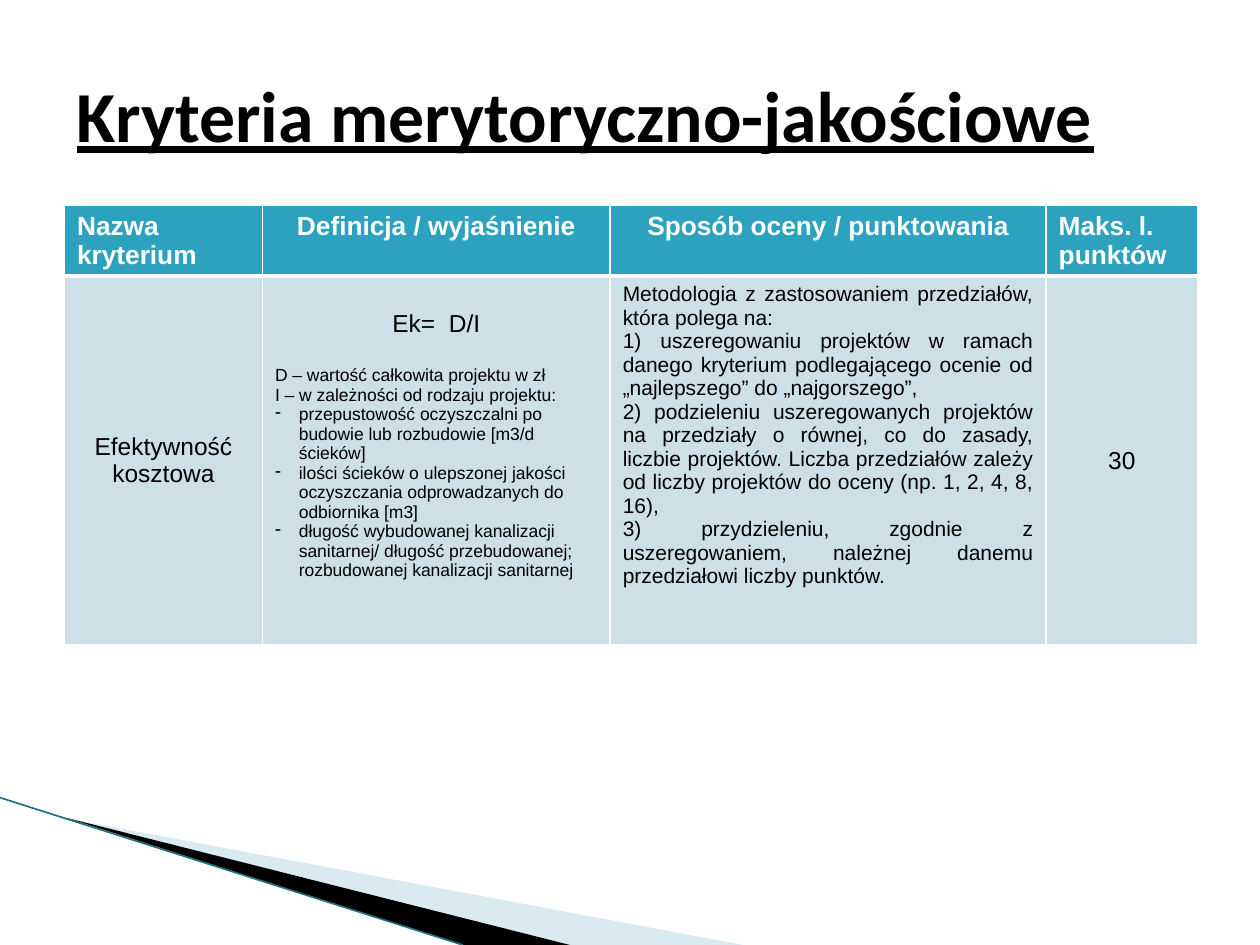
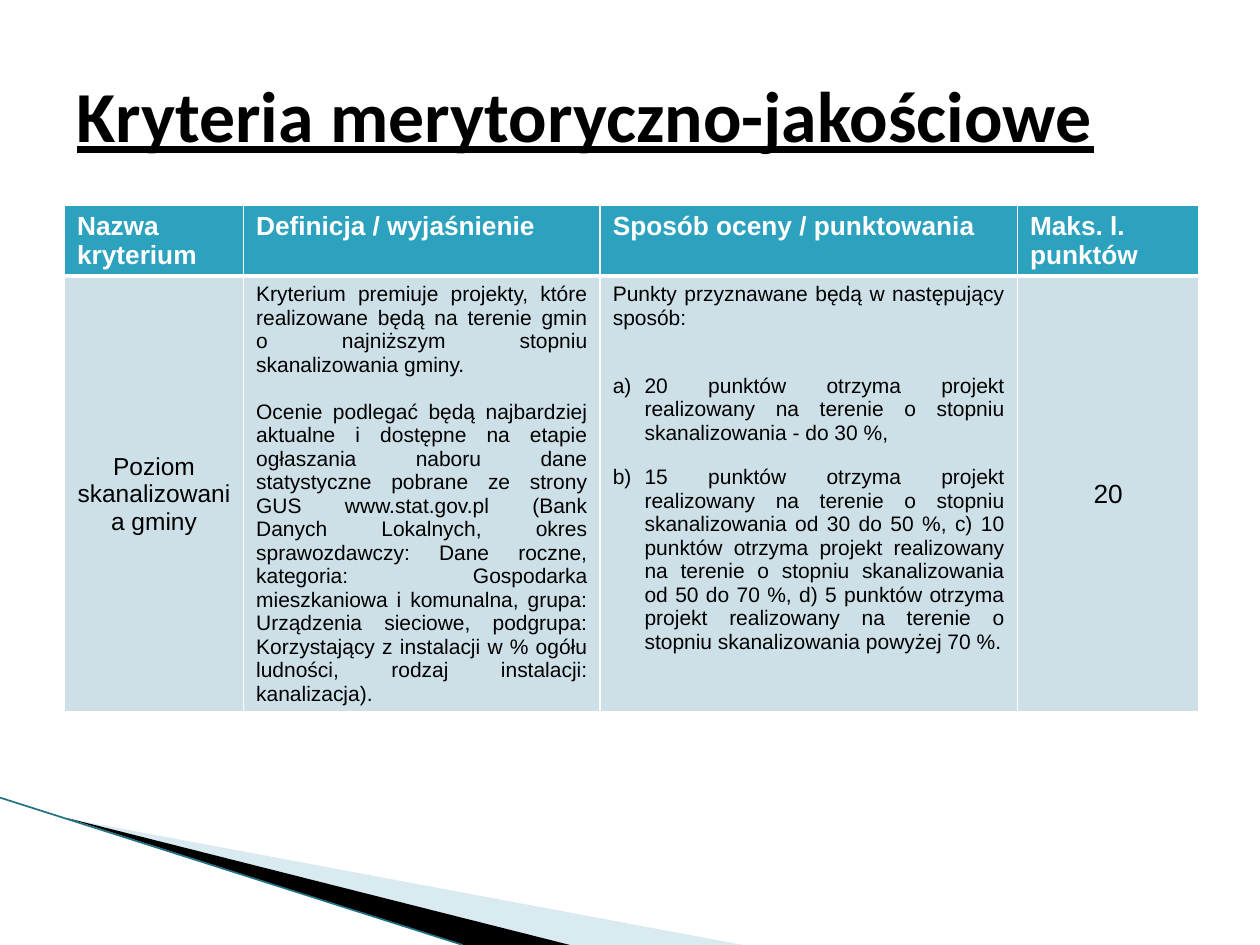
"""Builds two slides with tables of the quality criteria for project selection."""
from dataclasses import dataclass

import lxml.etree
import pptx
import pptx.dml.color
import pptx.enum.shapes
import pptx.enum.text
import pptx.oxml.ns
import pptx.presentation
import pptx.slide
import pptx.table
import pptx.text.text
import pptx.util

Cm = pptx.util.Cm
Pt = pptx.util.Pt
qn = pptx.oxml.ns.qn
Align = pptx.enum.text.PP_ALIGN
Anchor = pptx.enum.text.MSO_ANCHOR

WHITE, BLACK = "FFFFFF", "000000"
HEADER_FILL, BODY_FILL = "2DA2BF", "CDE0E8"
WEDGE_LIGHT, WEDGE_EDGE = "A0CBDC", "1F7183"
TITLE = "Kryteria merytoryczno-jakościowe"
HEADINGS = (
    "Nazwa kryterium",
    "Definicja / wyjaśnienie",
    "Sposób oceny / punktowania",
    "Maks. l. punktów",
)
LEFT, WIDTH = 1.3, 22.86
TABLE_TOP, HEADER_HEIGHT = 4.13, 1.43
THIN, THICK = 1, 3


@dataclass(frozen=True)
class Line:
    text: str
    size: float = 12
    align: Align = Align.JUSTIFY
    before: float = 0
    bullet: str = ""
    indent: float = 0
    color: str = BLACK
    bold: bool = False


@dataclass(frozen=True)
class Entry:
    lines: tuple[Line, ...]
    anchor: Anchor = Anchor.TOP
    top_margin: float = 0.13


@dataclass(frozen=True)
class Criterion:
    widths: tuple[float, ...]
    body_height: float
    heading_aligns: tuple[Align, ...]
    entries: tuple[Entry, ...]


@dataclass(frozen=True)
class Wedge:
    corners: tuple[tuple[float, float], ...]
    color: str
    opacity: int = 100


WEDGES = (
    Wedge(((1.4, 16.51), (14.98, 19.05), (11.48, 19.05)), WEDGE_LIGHT, 40),
    Wedge(((1.35, 16.49), (11.49, 19.05), (9.33, 19.05)), BLACK),
)


def rgb(code: str) -> pptx.dml.color.RGBColor:
    return pptx.dml.color.RGBColor.from_string(code)


def centred(text: str, size: float = 14) -> Entry:
    return Entry((Line(text, size, Align.CENTER),), Anchor.MIDDLE)


def dash(text: str) -> Line:
    return Line(text, 10, Align.LEFT, bullet="-", indent=0.48)


def lettered(text: str, before: float) -> Line:
    return Line(text, before=before, bullet="alphaLcParenR", indent=0.64)


CRITERIA = (
    Criterion(
        (3.99, 7.01, 8.79, 3.05),
        7.44,
        (Align.LEFT, Align.CENTER, Align.CENTER, Align.LEFT),
        (
            centred("Efektywność kosztowa"),
            Entry((
                Line("Ek=  D/I", 14, Align.CENTER),
                Line("D – wartość całkowita projektu w zł", 10, Align.LEFT, before=16),
                Line("I – w zależności od rodzaju projektu:", 10, Align.LEFT),
                dash("przepustowość oczyszczalni po budowie lub rozbudowie [m3/d ścieków]"),
                dash("ilości ścieków o ulepszonej jakości oczyszczania "
                     "odprowadzanych do odbiornika [m3]"),
                dash("długość wybudowanej kanalizacji sanitarnej/ długość "
                     "przebudowanej; rozbudowanej kanalizacji sanitarnej"),
            ), top_margin=0.69),
            Entry((
                Line("Metodologia z zastosowaniem przedziałów, która polega na:"),
                Line("1) uszeregowaniu projektów w ramach danego kryterium podlegającego "
                     "ocenie od „najlepszego” do „najgorszego”,"),
                Line("2) podzieleniu uszeregowanych projektów na przedziały o równej, co do "
                     "zasady, liczbie projektów. Liczba przedziałów zależy od liczby "
                     "projektów do oceny (np. 1, 2, 4, 8, 16),"),
                Line("3) przydzieleniu, zgodnie z uszeregowaniem, należnej danemu "
                     "przedziałowi liczby punktów."),
            )),
            centred("30"),
        ),
    ),
    Criterion(
        (3.61, 7.19, 8.41, 3.66),
        8.79,
        (Align.LEFT,) * 4,
        (
            centred("Poziom skanalizowania gminy"),
            Entry((
                Line("Kryterium premiuje projekty, które realizowane będą na terenie gmin "
                     "o najniższym stopniu skanalizowania gminy."),
                Line("Ocenie podlegać będą najbardziej aktualne i dostępne na etapie "
                     "ogłaszania naboru dane statystyczne pobrane ze strony GUS "
                     "www.stat.gov.pl (Bank Danych Lokalnych, okres sprawozdawczy: Dane "
                     "roczne, kategoria: Gospodarka mieszkaniowa i komunalna, grupa: "
                     "Urządzenia sieciowe, podgrupa: Korzystający z instalacji w % ogółu "
                     "ludności, rodzaj instalacji: kanalizacja).", before=13.4),
            )),
            Entry((
                Line("Punkty przyznawane będą w następujący sposób:"),
                lettered("20 punktów otrzyma projekt realizowany na terenie o stopniu "
                         "skanalizowania - do 30 %,", 25.5),
                lettered("15 punktów otrzyma projekt realizowany na terenie o stopniu "
                         "skanalizowania od 30 do 50 %, c) 10 punktów otrzyma projekt "
                         "realizowany na terenie o stopniu skanalizowania od 50 do 70 %, "
                         "d) 5 punktów otrzyma projekt realizowany na terenie o stopniu "
                         "skanalizowania powyżej 70 %.", 12),
            )),
            centred("20", 15),
        ),
    ),
)


def write_line(paragraph: pptx.text.text._Paragraph, line: Line) -> None:
    paragraph.text = line.text
    paragraph.alignment = line.align
    if line.bullet:
        properties = paragraph._p.get_or_add_pPr()
        properties.set("marL", str(Cm(line.indent)))
        properties.set("indent", str(-Cm(line.indent)))
        if line.bullet == "-":
            lxml.etree.SubElement(properties, qn("a:buChar"), char=line.bullet)
        else:
            lxml.etree.SubElement(properties, qn("a:buAutoNum"), type=line.bullet)
    if line.before:
        paragraph.space_before = Pt(line.before)
    for run in paragraph.runs:
        run.font.name = "Arial"
        run.font.size = Pt(line.size)
        run.font.bold = line.bold
        run.font.color.rgb = rgb(line.color)


def draw_borders(cell: pptx.table._Cell, top: float, bottom: float) -> None:
    properties = cell._tc.get_or_add_tcPr()
    for side, width in (("L", THIN), ("R", THIN), ("T", top), ("B", bottom)):
        border = lxml.etree.SubElement(properties, qn(f"a:ln{side}"), w=str(Pt(width)))
        fill = lxml.etree.SubElement(border, qn("a:solidFill"))
        lxml.etree.SubElement(fill, qn("a:srgbClr"), val=WHITE)


def fill_cell(cell: pptx.table._Cell, entry: Entry, color: str,
              top: float, bottom: float) -> None:
    draw_borders(cell, top, bottom)
    cell.fill.solid()
    cell.fill.fore_color.rgb = rgb(color)
    cell.vertical_anchor = entry.anchor
    cell.margin_top = Cm(entry.top_margin)
    for index, line in enumerate(entry.lines):
        frame = cell.text_frame
        write_line(frame.add_paragraph() if index else frame.paragraphs[0], line)


def add_wedges(slide: pptx.slide.Slide) -> None:
    for wedge in WEDGES:
        start, *others = [(Cm(x), Cm(y)) for x, y in wedge.corners]
        outline = slide.shapes.build_freeform(*start, scale=1.0)
        outline.add_line_segments(others)
        shape = outline.convert_to_shape()
        shape.shadow.inherit = False
        shape.line.fill.background()
        shape.fill.solid()
        shape.fill.fore_color.rgb = rgb(wedge.color)
        if wedge.opacity < 100:
            color = shape._element.spPr.find(".//" + qn("a:srgbClr"))
            lxml.etree.SubElement(color, qn("a:alpha"), val=str(wedge.opacity * 1000))
    edge = slide.shapes.add_connector(
        pptx.enum.shapes.MSO_CONNECTOR.STRAIGHT, Cm(0), Cm(16.08), Cm(9.33), Cm(19.05))
    edge.line.color.rgb = rgb(WEDGE_EDGE)
    edge.line.width = Pt(0.95)
    lxml.etree.SubElement(edge._element.spPr, qn("a:effectLst"))


def add_title(slide: pptx.slide.Slide) -> None:
    title = slide.shapes.add_textbox(Cm(LEFT), Cm(0.71), Cm(WIDTH), Cm(3.17))
    frame = title.text_frame
    frame.word_wrap = True
    frame.vertical_anchor = Anchor.MIDDLE
    frame.text = TITLE
    font = frame.paragraphs[0].runs[0].font
    font.name, font.size = "Calibri", Pt(41)
    font.bold = font.underline = True
    font.color.rgb = rgb(BLACK)


def add_criterion(slide: pptx.slide.Slide, criterion: Criterion) -> None:
    table = slide.shapes.add_table(
        2, len(HEADINGS), Cm(LEFT), Cm(TABLE_TOP), Cm(WIDTH),
        Cm(HEADER_HEIGHT + criterion.body_height)).table
    table.horz_banding = False
    table.rows[0].height = Cm(HEADER_HEIGHT)
    table.rows[1].height = Cm(criterion.body_height)
    columns = zip(HEADINGS, criterion.heading_aligns, criterion.widths, criterion.entries)
    for index, (heading, align, width, entry) in enumerate(columns):
        table.columns[index].width = Cm(width)
        header = Entry((Line(heading, 15, align, color=WHITE, bold=True),))
        fill_cell(table.cell(0, index), header, HEADER_FILL, THIN, THICK)
        fill_cell(table.cell(1, index), entry, BODY_FILL, THICK, THIN)


def add_slide(deck: pptx.presentation.Presentation, criterion: Criterion) -> None:
    slide = deck.slides.add_slide(deck.slide_layouts[6])
    add_wedges(slide)
    add_criterion(slide, criterion)
    add_title(slide)


def main() -> None:
    deck = pptx.Presentation()
    deck.slide_width, deck.slide_height = Cm(25.4), Cm(19.05)
    for criterion in CRITERIA:
        add_slide(deck, criterion)
    deck.save("out.pptx")


if __name__ == "__main__":
    main()
